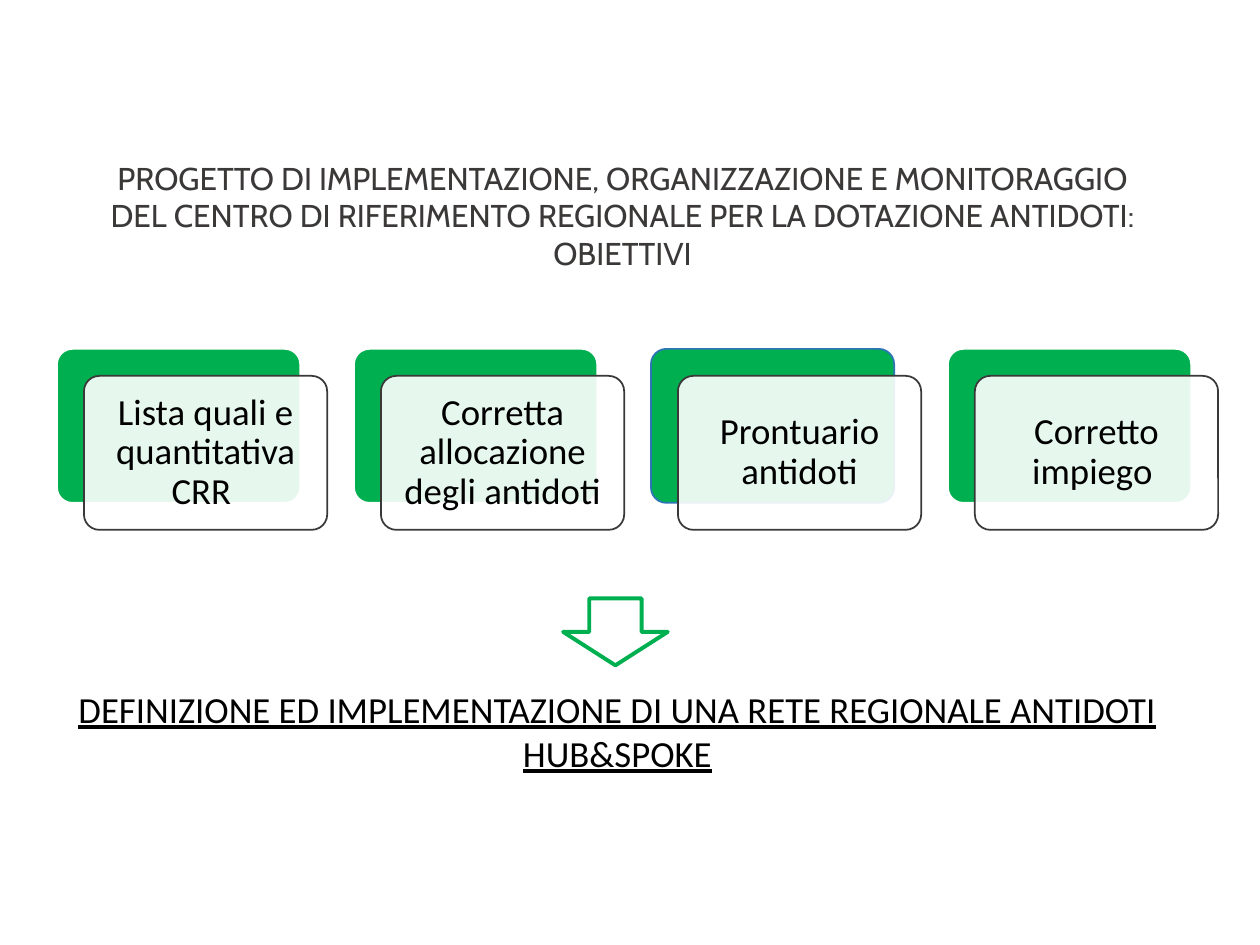
"""Build the slide on the goals of the regional antidote centre."""
import pptx
import pptx.dml.color
import pptx.enum.shapes
import pptx.enum.text
import pptx.oxml.ns
import pptx.util
from lxml import etree

Pt = pptx.util.Pt
RGBColor = pptx.dml.color.RGBColor
SHAPE = pptx.enum.shapes.MSO_SHAPE
CENTER = pptx.enum.text.PP_ALIGN.CENTER

GREEN = RGBColor(0x00, 0xB0, 0x50)
BLUE = RGBColor(0x2E, 0x75, 0xB6)
DARK = RGBColor(0x3B, 0x38, 0x38)
WHITE = RGBColor(0xFF, 0xFF, 0xFF)
BLACK = RGBColor(0x00, 0x00, 0x00)

GOALS = [
    ("Lista quali e quantitativa CRR ", WHITE),
    ("Corretta allocazione degli antidoti", WHITE),
    ("Prontuario antidoti", BLUE),
    ("Corretto impiego ", WHITE),
]
CARD_LEFT, CARD_TOP = 32.6, 199.4
CARD_WIDTH, CARD_HEIGHT = 139, 88
CARD_PITCH = 169.7
CARD_SHIFT = 15.4


def write(box, text, font_name, size, color):
    box.text_frame.word_wrap = True
    box.text_frame.text = text
    para = box.text_frame.paragraphs[0]
    para.alignment = CENTER
    span = para.runs[0]
    span.font.name = font_name
    span.font.size = Pt(size)
    span.font.color.rgb = color
    return para


def add_card(left, top, fill_color, line_color):
    card = page.shapes.add_shape(
        SHAPE.ROUNDED_RECTANGLE, Pt(left), Pt(top), Pt(CARD_WIDTH), Pt(CARD_HEIGHT)
    )
    card.adjustments[0] = 0.1
    card.shadow.inherit = False
    card.fill.solid()
    card.fill.fore_color.rgb = fill_color
    card.line.color.rgb = line_color
    card.line.width = Pt(1)
    return card


deck = pptx.Presentation()
deck.slide_width, deck.slide_height = Pt(720), Pt(540)
page = deck.slides.add_slide(deck.slide_layouts[6])

title = page.shapes.add_textbox(Pt(45.4), Pt(87.1), Pt(620.6), Pt(72.7))
write(
    title,
    "PROGETTO DI IMPLEMENTAZIONE, ORGANIZZAZIONE E MONITORAGGIO DEL CENTRO "
    "DI RIFERIMENTO REGIONALE PER LA DOTAZIONE ANTIDOTI: OBIETTIVI",
    "Cabin", 18, DARK,
)

outcome = page.shapes.add_textbox(Pt(33.8), Pt(388.8), Pt(638), Pt(58.3))
outcome_para = write(
    outcome,
    "DEFINIZIONE ED IMPLEMENTAZIONE DI UNA RETE REGIONALE ANTIDOTI HUB&SPOKE",
    "Calibri", 21, BLACK,
)
outcome_para.runs[0].font.underline = True

arrow = page.shapes.add_shape(SHAPE.DOWN_ARROW, Pt(321.8), Pt(342), Pt(59.8), Pt(38.2))
arrow.shadow.inherit = False
arrow.fill.background()
arrow.line.color.rgb = GREEN
arrow.line.width = Pt(2.25)

for index, (goal, back_line) in enumerate(GOALS):
    left = CARD_LEFT + index * CARD_PITCH
    add_card(left, CARD_TOP, GREEN, back_line)
    front = add_card(left + CARD_SHIFT, CARD_TOP + CARD_SHIFT, WHITE, DARK)
    white = front.fill._xPr.find(".//" + pptx.oxml.ns.qn("a:srgbClr"))
    etree.SubElement(white, pptx.oxml.ns.qn("a:alpha"), val="90000")
    frame = front.text_frame
    frame.margin_left = frame.margin_right = Pt(6.5)
    frame.margin_top = frame.margin_bottom = Pt(6.5)
    frame.vertical_anchor = pptx.enum.text.MSO_ANCHOR.MIDDLE
    write(front, goal, "Calibri", 21, BLACK).line_spacing = 0.9

deck.save("out.pptx")
